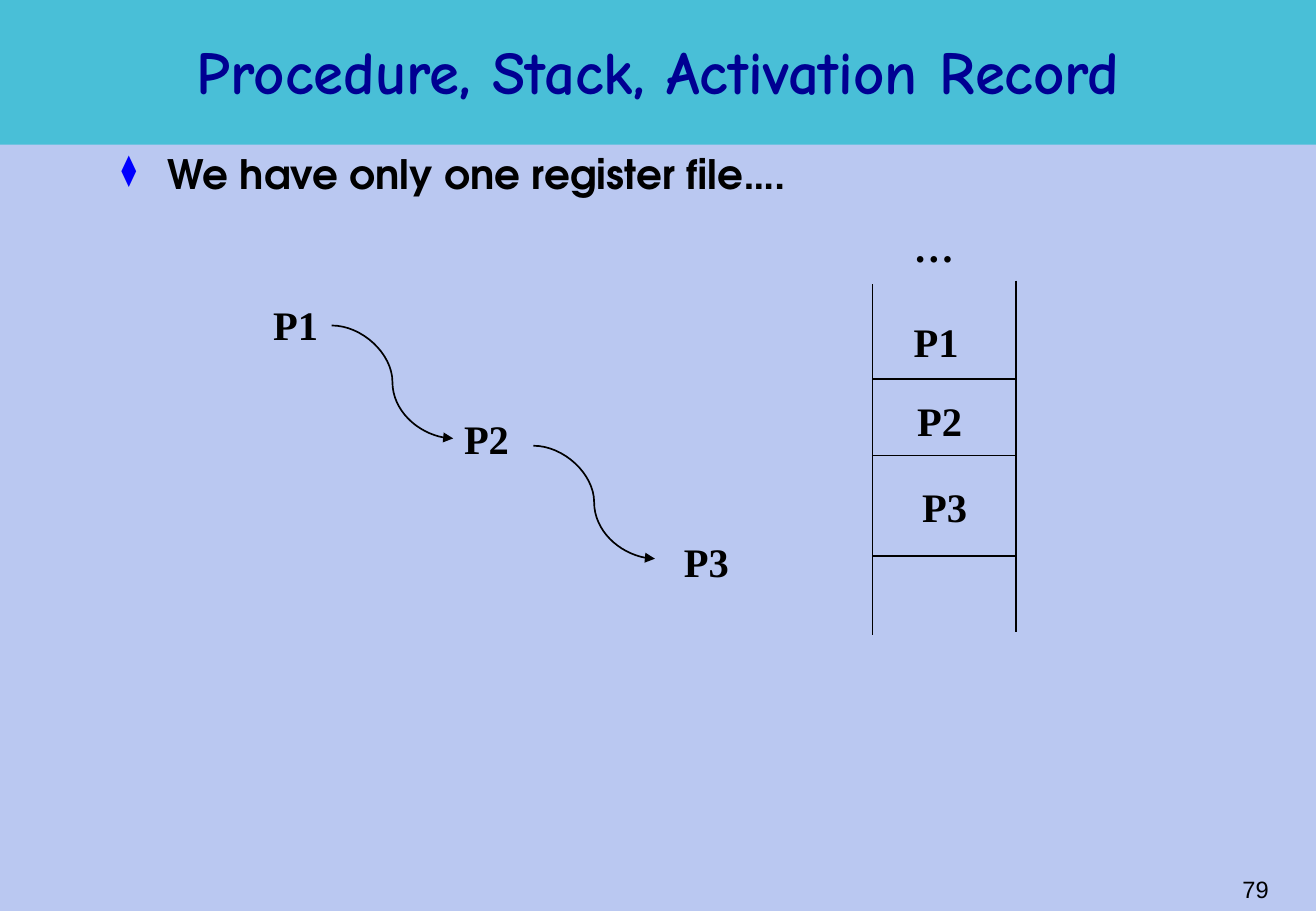
"""Builds the slide on procedures, the stack and activation records."""
from lxml import etree
from pptx import Presentation
from pptx import util as u
from pptx.dml.color import RGBColor
from pptx.enum import shapes, text
from pptx.oxml.ns import qn

COLORS = {"background": "BAC8F1", "band": "49BFD7", "title": "000092",
          "ink": "000000", "bullet": "0000FF"}


class Deck:
    """Holds the style and the current slide."""

    def __init__(self, width, height):
        self.prs = Presentation()
        self.prs.slide_width = u.Inches(width)
        self.prs.slide_height = u.Inches(height)
        self.s = self.prs.slides.add_slide(self.prs.slide_layouts[6])
        self.fill(self.s.background.fill, "background")

    def fill(self, fill, color):
        fill.solid()
        fill.fore_color.rgb = RGBColor.from_string(COLORS[color])

    def band(self, *box):
        sp = self.s.shapes.add_shape(shapes.MSO_SHAPE.RECTANGLE, *map(u.Inches, box))
        sp.shadow.inherit = False
        self.fill(sp.fill, "band")
        sp.line.fill.background()

    def text(self, box, lines, font="Times New Roman", size=24, color="ink",
             bold=True, align=text.PP_ALIGN.LEFT, anchor=text.MSO_ANCHOR.TOP,
             wrap=True, spacing=None, gap=0, bullet=None):
        tf = self.s.shapes.add_textbox(*map(u.Inches, box)).text_frame
        tf.word_wrap = wrap
        tf.vertical_anchor = anchor
        for i, line in enumerate(lines):
            p = tf.add_paragraph() if i else tf.paragraphs[0]
            p.alignment = align
            if spacing:
                p.line_spacing = spacing
            if i:
                p.space_before = u.Pt(gap)
            if bullet:
                self.bullet(p, bullet)
            r = p.add_run()
            r.text = line
            r.font.name = font
            r.font.size = u.Pt(size)
            r.font.bold = bold
            r.font.color.rgb = RGBColor.from_string(COLORS[color])

    def bullet(self, p, char):
        pPr = p._p.get_or_add_pPr()
        indent = u.Inches(0.38)
        pPr.set("marL", str(indent))
        pPr.set("indent", str(-indent))
        buClr = etree.SubElement(pPr, qn("a:buClr"))
        etree.SubElement(buClr, qn("a:srgbClr"), val=COLORS["bullet"])
        etree.SubElement(pPr, qn("a:buSzPct"), val="75000")
        etree.SubElement(pPr, qn("a:buChar"), char=char)

    def label(self, x, y, *lines, gap=0):
        self.text((x, y, 0.58, 0.5), lines, wrap=False, gap=gap)

    def line(self, x1, y1, x2, y2, kind=shapes.MSO_CONNECTOR.STRAIGHT):
        c = self.s.shapes.add_connector(kind, *map(u.Inches, (x1, y1, x2, y2)))
        c.line.width = u.Pt(1)
        self.fill(c.line.fill, "ink")
        etree.SubElement(c._element.spPr, qn("a:effectLst"))
        return c

    def call_arrow(self, x, y):
        c = self.line(x, y, x + 1, y + 0.93, shapes.MSO_CONNECTOR.CURVE)
        etree.SubElement(c.line._get_or_add_ln(), qn("a:tailEnd"), type="triangle")


def main():
    deck = Deck(10.83, 7.5)
    deck.band(0, 0, 10.83, 1.19)
    deck.text((0.81, 0.13, 9.21, 0.99), ["Procedure, Stack, Activation Record"],
              font="Comic Neue", size=36, color="title", spacing=0.85,
              align=text.PP_ALIGN.CENTER, anchor=text.MSO_ANCHOR.MIDDLE)
    deck.text((0.9, 1.22, 9.21, 0.92), ["We have only one register file…."],
              font="TeX Gyre Adventor", spacing=0.9, bullet="⧫")

    for name, x, y in (("P1", 2.15, 2.42), ("P2", 3.72, 3.36), ("P3", 5.53, 4.37)):
        deck.label(x, y, name)
    for x, y in ((2.73, 2.68), (4.39, 3.67)):
        deck.call_arrow(x, y)

    left, right = 7.18, 8.36
    for x, top in ((left, 2.34), (right, 2.31)):
        deck.line(x, top, x, top + 2.89)
    for y in (3.12, 3.75, 4.58):
        deck.line(left, y, right, y)
    deck.label(7.42, 1.78, "…", "P1", gap=27.6)
    deck.label(7.45, 3.21, "P2")
    deck.label(7.49, 3.92, "P3")

    deck.text((8.28, 7.07, 2.26, 0.5), ["79"], font="Arial", size=14, bold=False,
              align=text.PP_ALIGN.RIGHT, anchor=text.MSO_ANCHOR.MIDDLE)
    deck.prs.save("out.pptx")


if __name__ == "__main__":
    main()
